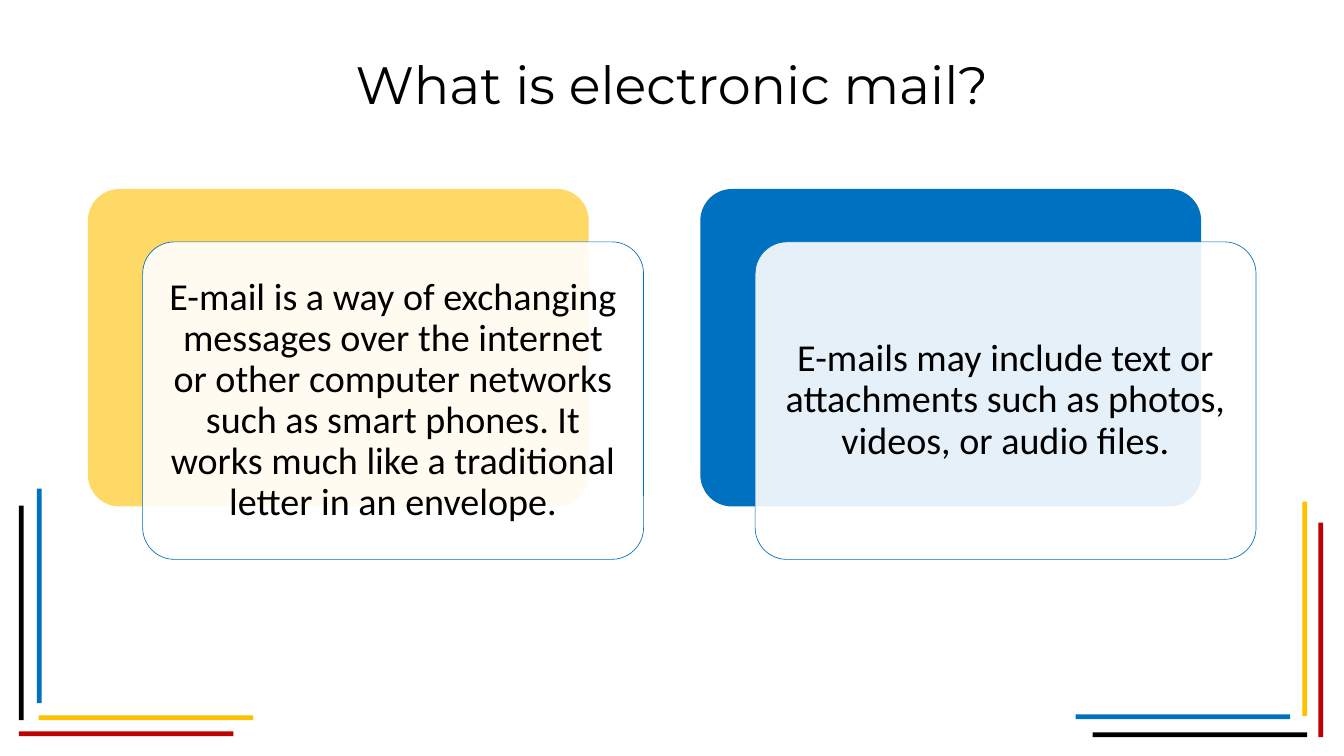
"""Build the slide that explains electronic mail with two layered cards."""
from typing import NamedTuple, Optional

from lxml import etree
from pptx import Presentation
from pptx import util as u
from pptx.dml.color import RGBColor
from pptx.enum import shapes, text
from pptx.oxml import ns

BLACK, WHITE, RED = "000000", "FFFFFF", "C00000"
GOLD, BLUE, YELLOW = "FFC000", "0070C0", "FFD966"
BAR_LENGTH, BAR_WIDTH = 2.27, 0.05
CARD_WIDTH, CARD_HEIGHT, CARD_TOP = 5.3, 3.36, 2
FRONT_SHIFT_X, FRONT_SHIFT_Y, TEXT_MARGIN = 0.58, 0.56, 0.1


class Bar(NamedTuple):
    """A thin coloured bar in a lower corner."""
    left: float
    top: float
    color: str
    upright: bool


class Card(NamedTuple):
    """A coloured panel with a translucent text panel in front."""
    left: float
    color: str
    wording: str


BARS = [
    Bar(0.2, 5.35, BLACK, True),
    Bar(0.2, 7.74, RED, False),
    Bar(0.41, 7.57, GOLD, False),
    Bar(0.39, 5.17, BLUE, True),
    Bar(11.56, 7.75, BLACK, False),
    Bar(13.95, 5.53, RED, True),
    Bar(13.78, 5.31, GOLD, True),
    Bar(11.38, 7.56, BLUE, False),
]
CARDS = [
    Card(0.93, YELLOW,
         "E-mail is a way of exchanging messages over the internet or other "
         "computer networks such as smart phones. It works much like a "
         "traditional letter in an envelope."),
    Card(7.41, BLUE,
         "E-mails may include text or attachments such as photos, videos, "
         "or audio files."),
]


def rgb(color: str) -> RGBColor:
    """Turn a hex string into a colour."""
    return RGBColor.from_string(color)


def add_panel(slide, kind, left: float, top: float, width: float, height: float,
              color: str, line: Optional[str] = None, opacity: int = 100):
    """Add a filled shape with optional outline and transparency."""
    shape = slide.shapes.add_shape(kind, u.Inches(left), u.Inches(top),
                                   u.Inches(width), u.Inches(height))
    shape.shadow.inherit = False
    shape.fill.solid()
    shape.fill.fore_color.rgb = rgb(color)
    if opacity < 100:
        fill = shape._element.spPr.find(ns.qn("a:solidFill"))
        etree.SubElement(fill[0], ns.qn("a:alpha"), val=str(opacity * 1000))
    if line:
        shape.line.color.rgb = rgb(line)
        shape.line.width = u.Pt(0.5)
    else:
        shape.line.fill.background()
    return shape


def write_text(shape, wording: str, *, size: float, font: str, margin: float,
               spacing: float, color: str = BLACK) -> None:
    """Write one centred paragraph into a shape."""
    frame = shape.text_frame
    frame.word_wrap = True
    frame.auto_size = text.MSO_AUTO_SIZE.NONE
    frame.vertical_anchor = text.MSO_ANCHOR.MIDDLE
    frame.margin_left = frame.margin_right = u.Inches(margin)
    frame.margin_top = frame.margin_bottom = u.Inches(margin)
    paragraph = frame.paragraphs[0]
    paragraph.alignment = text.PP_ALIGN.CENTER
    paragraph.line_spacing = spacing
    run = paragraph.add_run()
    run.text = wording
    run.font.size = u.Pt(size)
    run.font.name = font
    run.font.color.rgb = rgb(color)


def add_bar(slide, bar: Bar) -> None:
    """Draw one corner bar."""
    width, height = ((BAR_WIDTH, BAR_LENGTH) if bar.upright
                     else (BAR_LENGTH, BAR_WIDTH))
    add_panel(slide, shapes.MSO_SHAPE.RECTANGLE, bar.left, bar.top,
              width, height, bar.color)


def add_card(slide, card: Card) -> None:
    """Draw both panels of a card and its text."""
    left, top = card.left + FRONT_SHIFT_X, CARD_TOP + FRONT_SHIFT_Y
    rounded = shapes.MSO_SHAPE.ROUNDED_RECTANGLE
    back = add_panel(slide, rounded, card.left, CARD_TOP,
                     CARD_WIDTH, CARD_HEIGHT, card.color)
    front = add_panel(slide, rounded, left, top, CARD_WIDTH, CARD_HEIGHT,
                      WHITE, line=BLUE, opacity=90)
    for panel in (back, front):
        panel.adjustments[0] = 0.1
    box = slide.shapes.add_textbox(
        u.Inches(left + TEXT_MARGIN), u.Inches(top + TEXT_MARGIN),
        u.Inches(CARD_WIDTH - 2 * TEXT_MARGIN),
        u.Inches(CARD_HEIGHT - 2 * TEXT_MARGIN))
    write_text(box, card.wording, size=29, font="Calibri", margin=0.12, spacing=0.9)


def main() -> None:
    """Build and save the presentation."""
    presentation = Presentation()
    presentation.slide_width = u.Inches(14.22)
    presentation.slide_height = u.Inches(8)
    slide = presentation.slides.add_slide(presentation.slide_layouts[5])
    for bar in BARS:
        add_bar(slide, bar)
    title = slide.shapes.title
    title.left, title.top = u.Inches(1.11), u.Inches(0.3)
    title.width, title.height = u.Inches(12), u.Inches(1.25)
    write_text(title, "What is electronic mail?", size=40, font="Montserrat",
               margin=0.1, spacing=0.9)
    for card in CARDS:
        add_card(slide, card)
    presentation.save("out.pptx")


if __name__ == "__main__":
    main()
